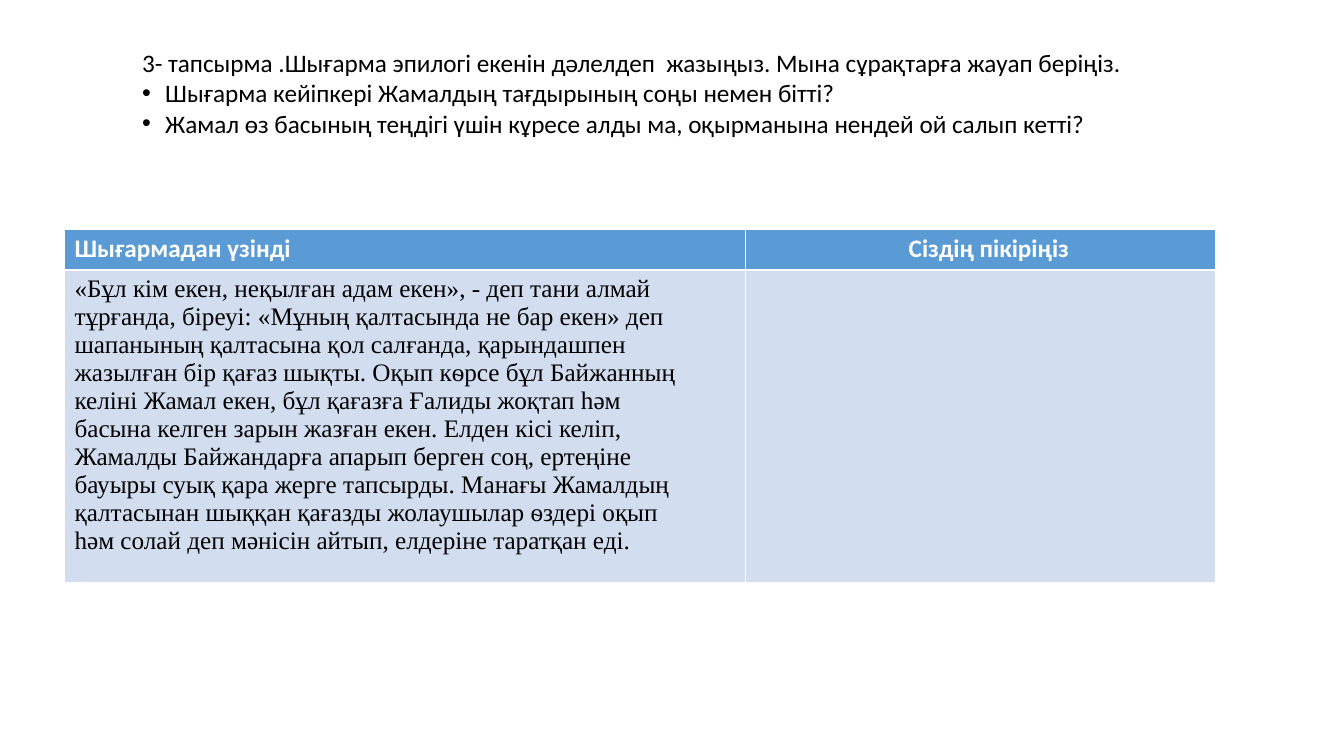
from lxml import etree
from pptx import Presentation
from pptx.dml.color import RGBColor
from pptx.enum.text import MSO_ANCHOR, MSO_AUTO_SIZE, PP_ALIGN
from pptx.oxml.ns import qn
from pptx.util import Inches, Pt

TOP = MSO_ANCHOR.TOP
NO_FIT = MSO_AUTO_SIZE.NONE
LEFT = PP_ALIGN.LEFT
THIN, THICK = 0.45, 1.47

TASK = "3- тапсырма .Шығарма эпилогі екенін дәлелдеп  жазыңыз. Мына сұрақтарға жауап беріңіз."
QUESTIONS = [
    "Шығарма кейіпкері Жамалдың тағдырының соңы немен бітті?",
    "Жамал өз басының теңдігі үшін кұресе алды ма, оқырманына нендей ой салып кетті?",
]
EXCERPT = [
    "«Бұл кім екен, неқылған адам екен», - деп тани алмай",
    "тұрғанда, біреуі: «Мұның қалтасында не бар екен» деп",
    "шапанының қалтасына қол салғанда, қарындашпен",
    "жазылған бір қағаз шықты. Оқып кѳрсе бұл Байжанның",
    "келіні Жамал екен, бұл қағазға Ғалиды жоқтап һәм",
    "басына келген зарын жазған екен. Елден кісі келіп,",
    "Жамалды Байжандарға апарып берген соң, ертеңіне",
    "бауыры суық қара жерге тапсырды. Манағы Жамалдың",
    "қалтасынан шыққан қағазды жолаушылар ѳздері оқып",
    "һәм солай деп мәнісін айтып, елдеріне таратқан еді.",
]


def color(value):
    return RGBColor.from_string(value)


def write(paragraph, text, font="Calibri", size=18, fill="000000", bold=False, spacing=1.0):
    paragraph.alignment = LEFT
    paragraph.line_spacing = spacing
    paragraph.space_before = paragraph.space_after = Pt(0)
    run = paragraph.add_run()
    run.text = text
    run.font.name, run.font.size, run.font.bold = font, Pt(size), bold
    run.font.color.rgb = color(fill)


def set_bullet(paragraph, symbol=None, indent=0):
    properties = paragraph._p.get_or_add_pPr()
    properties.set("marL", str(Inches(indent)))
    properties.set("indent", str(-Inches(indent)))
    if symbol:
        etree.SubElement(properties, qn("a:buFont"), typeface="Arial")
        etree.SubElement(properties, qn("a:buChar"), char=symbol)
    else:
        etree.SubElement(properties, qn("a:buNone"))


def set_borders(cell, top, bottom, line_color="FFFFFF"):
    properties = cell._tc.get_or_add_tcPr()
    for side, width in (("L", THIN), ("R", THIN), ("T", top), ("B", bottom)):
        line = etree.SubElement(properties, qn(f"a:ln{side}"), w=str(Pt(width)))
        solid = etree.SubElement(line, qn("a:solidFill"))
        etree.SubElement(solid, qn("a:srgbClr"), val=line_color)


class TaskSlide:
    """Hold the table colours and the slide being built."""

    header_fill = "5B9BD5"
    body_fill = "D2DEEF"

    def __init__(self, presentation):
        self.slide = presentation.slides.add_slide(presentation.slide_layouts[1])
        title = self.slide.shapes.title
        title.element.getparent().remove(title.element)

    def add_task(self, left, top, width, height):
        body = self.slide.placeholders[1]
        body.left, body.top = Inches(left), Inches(top)
        body.width, body.height = Inches(width), Inches(height)
        frame = body.text_frame
        frame.word_wrap, frame.auto_size, frame.vertical_anchor = True, NO_FIT, TOP
        write(frame.paragraphs[0], TASK)
        set_bullet(frame.paragraphs[0])
        for question in QUESTIONS:
            paragraph = frame.add_paragraph()
            write(paragraph, question)
            set_bullet(paragraph, "•", 0.23)

    def add_table(self, left, top, widths, heights):
        frame = self.slide.shapes.add_table(
            len(heights), len(widths), Inches(left), Inches(top),
            Inches(sum(widths)), Inches(sum(heights)))
        table = frame.table
        table.first_row = table.horz_banding = False
        for column, width in zip(table.columns, widths):
            column.width = Inches(width)
        for row, height in zip(table.rows, heights):
            row.height = Inches(height)
        for cell in table.rows[0].cells:
            self.style_cell(cell, self.header_fill, THIN, THICK)
        for cell in table.rows[1].cells:
            self.style_cell(cell, self.body_fill, THICK, THIN)
        return table

    def style_cell(self, cell, fill, top, bottom):
        set_borders(cell, top, bottom)
        cell.fill.solid()
        cell.fill.fore_color.rgb = color(fill)

    def fill_table(self, table):
        for column, heading in enumerate(("Шығармадан үзінді", "Сіздің пікіріңіз")):
            paragraph = table.cell(0, column).text_frame.paragraphs[0]
            write(paragraph, heading, fill="FFFFFF", bold=True)
        table.cell(0, 1).margin_left = Inches(1.62)
        frame = table.cell(1, 0).text_frame
        for index, line in enumerate(EXCERPT):
            paragraph = frame.add_paragraph() if index else frame.paragraphs[0]
            write(paragraph, line, font="Times New Roman", spacing=Pt(20))


def main():
    presentation = Presentation()
    presentation.slide_width, presentation.slide_height = Inches(13.34), Inches(7.5)
    task_slide = TaskSlide(presentation)
    task_slide.add_task(1.31, 0.42, 10.45, 1.9)
    table = task_slide.add_table(0.64, 2.27, widths=(6.76, 4.66), heights=(0.4, 3.1))
    task_slide.fill_table(table)
    presentation.save("out.pptx")


if __name__ == "__main__":
    main()
